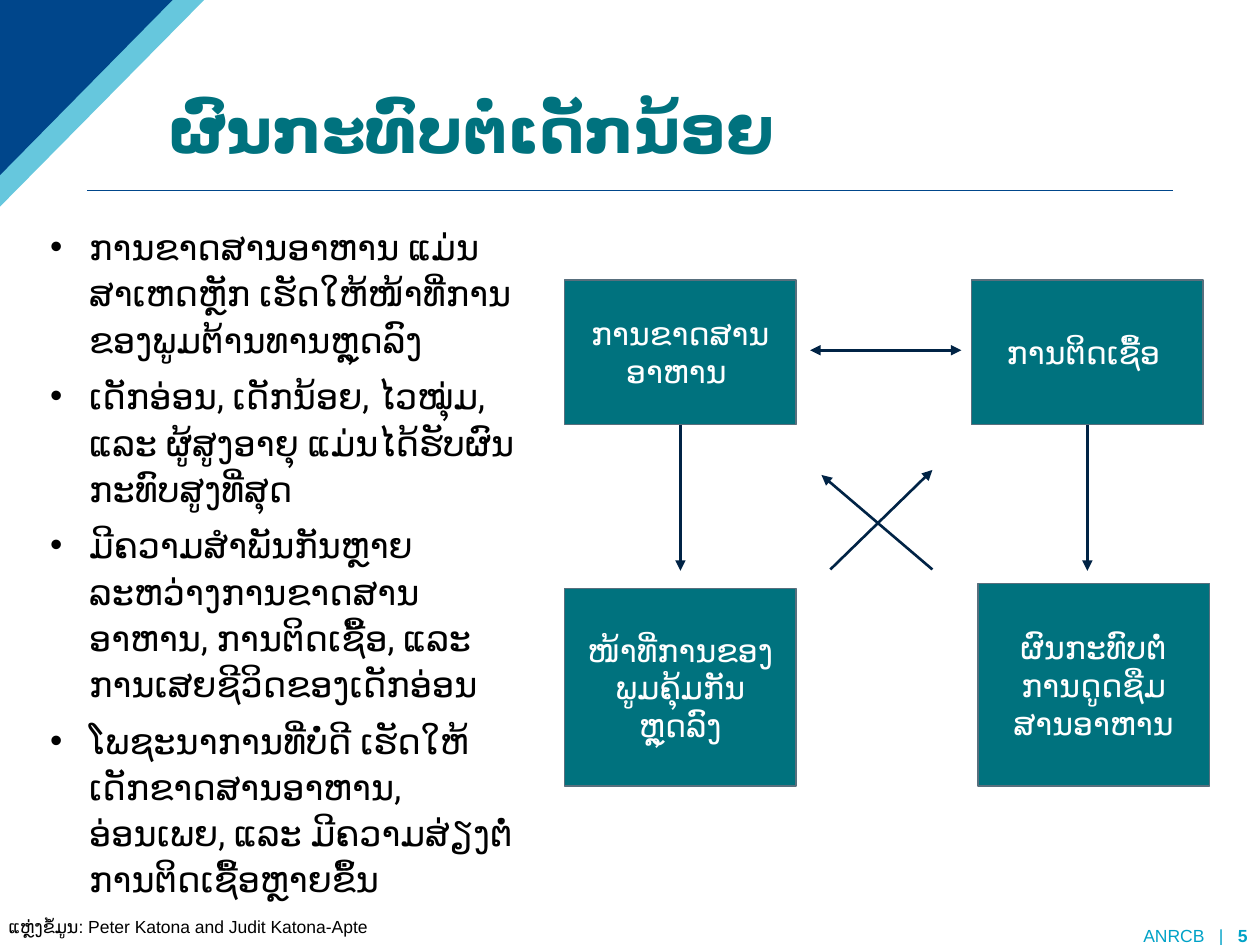
"""Build a slide on how malnutrition and infection affect children."""
from lxml import etree
from pptx import Presentation
from pptx.dml.color import RGBColor
from pptx.enum import shapes, text
from pptx.oxml import ns
from pptx.util import Inches, Pt

TEAL = RGBColor(0x00, 0x72, 0x7E)
NAVY = RGBColor(0x00, 0x23, 0x45)
BLUE = RGBColor(0x00, 0x46, 0x8B)
CYAN = RGBColor(0x00, 0xA2, 0xC7)
SLATE = RGBColor(0x58, 0x6F, 0x7D)
BLACK = RGBColor(0, 0, 0)
WHITE = RGBColor(255, 255, 255)

TITLE = "ຜົນກະທົບຕໍ່ເດັກນ້ອຍ"
BULLETS = [
    "ການຂາດສານອາຫານ ແມ່ນສາເຫດຫຼັກ ເຮັດໃຫ້ໜ້າທີ່ການຂອງພູມຕ້ານທານຫຼຸດລົງ",
    "ເດັກອ່ອນ, ເດັກນ້ອຍ, ໄວໝຸ່ມ, ແລະ ຜູ້ສູງອາຍຸ ແມ່ນໄດ້ຮັບຜົນກະທົບສູງທີ່ສຸດ",
    "ມີຄວາມສຳພັນກັນຫຼາຍ ລະຫວ່າງການຂາດສານອາຫານ, ການຕິດເຊື້ອ, ແລະ ການເສຍຊີວິດຂອງເດັກອ່ອນ",
    "ໂພຊະນາການທີ່ບໍ່ດີ ເຮັດໃຫ້ເດັກຂາດສານອາຫານ, ອ່ອນເພຍ, ແລະ ມີຄວາມສ່ຽງຕໍ່ການຕິດເຊື້ອຫຼາຍຂຶ້ນ",
]
BOX_WIDTH = 1.84
BOXES = [
    (4.48, 2.22, 1.15, ["ການຂາດສານອາຫານ "]),
    (7.71, 2.22, 1.15, ["ການຕິດເຊື້ອ "]),
    (4.48, 4.67, 1.57, ["ໜ້າທີ່ການຂອງ ພູມຄຸ້ມກັນຫຼຸດລົງ"]),
    (7.76, 4.63, 1.61, ["ຜົນກະທົບຕໍ່", "ການດູດຊືມ", "ສານອາຫານ"]),
]
ARROWS = [
    ((6.43, 2.78), (7.63, 2.78), ("headEnd", "tailEnd")),
    ((5.4, 3.37), (5.4, 4.53), ("tailEnd",)),
    ((8.63, 3.37), (8.63, 4.53), ("tailEnd",)),
    ((7.4, 4.52), (6.52, 3.77), ("tailEnd",)),
    ((6.59, 4.52), (7.4, 3.73), ("tailEnd",)),
]
CORNERS = [(1.62, 1.64, CYAN, 60), (1.37, 1.39, BLUE, 100)]


def add_run(paragraph, words, size, color, font="Roboto", bold=False):
    run = paragraph.add_run()
    run.text = words
    run.font.name = font
    run.font.size = Pt(size)
    run.font.bold = bold
    run.font.color.rgb = color


def add_text(slide, left, top, width, height, anchor=text.MSO_ANCHOR.TOP):
    frame = slide.shapes.add_textbox(*map(Inches, (left, top, width, height))).text_frame
    frame.word_wrap = True
    frame.vertical_anchor = anchor
    return frame


def next_paragraph(frame, index):
    return frame.paragraphs[0] if index == 0 else frame.add_paragraph()


def add_corner(slide, width, height, color, opacity):
    builder = slide.shapes.build_freeform(0, 0)
    builder.add_line_segments([(Inches(width), 0), (0, Inches(height))], close=True)
    corner = builder.convert_to_shape()
    corner.shadow.inherit = False
    corner.fill.solid()
    corner.fill.fore_color.rgb = color
    corner.line.fill.background()
    if opacity < 100:
        fill_color = corner._element.spPr.find(ns.qn("a:solidFill"))[0]
        etree.SubElement(fill_color, ns.qn("a:alpha"), val=str(opacity * 1000))


def add_line(slide, start, end, color, weight, arrowheads=()):
    line = slide.shapes.add_connector(
        shapes.MSO_CONNECTOR.STRAIGHT, *map(Inches, start + end))
    line.line.color.rgb = color
    line.line.width = Pt(weight)
    properties = line._element.spPr
    for arrowhead in arrowheads:
        etree.SubElement(properties.find(ns.qn("a:ln")), ns.qn(f"a:{arrowhead}"), type="triangle")
    etree.SubElement(properties, ns.qn("a:effectLst"))


def add_box(slide, left, top, height, lines):
    box = slide.shapes.add_shape(
        shapes.MSO_SHAPE.RECTANGLE, *map(Inches, (left, top, BOX_WIDTH, height)))
    box.shadow.inherit = False
    box.fill.solid()
    box.fill.fore_color.rgb = TEAL
    box.line.color.rgb = SLATE
    box.line.width = Pt(1)
    box.text_frame.word_wrap = True
    box.text_frame.vertical_anchor = text.MSO_ANCHOR.MIDDLE
    for index, words in enumerate(lines):
        paragraph = next_paragraph(box.text_frame, index)
        paragraph.alignment = text.PP_ALIGN.CENTER
        add_run(paragraph, words, 18, WHITE)


def add_bullets(slide):
    frame = add_text(slide, 0.3, 1.71, 3.89, 5.17)
    for index, words in enumerate(BULLETS):
        paragraph = next_paragraph(frame, index)
        paragraph.line_spacing = 1.1
        paragraph.space_before = Pt(6 if index else 0)
        properties = paragraph._p.get_or_add_pPr()
        properties.set("marL", str(Inches(0.31)))
        properties.set("indent", str(-Inches(0.31)))
        bullet_color = etree.SubElement(properties, ns.qn("a:buClr"))
        etree.SubElement(bullet_color, ns.qn("a:srgbClr"), val=str(BLACK))
        etree.SubElement(properties, ns.qn("a:buFont"), typeface="Arial")
        etree.SubElement(properties, ns.qn("a:buChar"), char="•")
        add_run(paragraph, words, 20, BLACK)


def main():
    presentation = Presentation()
    presentation.slide_width = Inches(10)
    presentation.slide_height = Inches(7.5)
    slide = presentation.slides.add_slide(presentation.slide_layouts[6])

    add_line(slide, (0.69, 1.51), (9.31, 1.51), BLUE, 0.75)
    for corner in CORNERS:
        add_corner(slide, *corner)

    title = add_text(slide, 1.24, 0.38, 8.36, 1, text.MSO_ANCHOR.BOTTOM).paragraphs[0]
    title.line_spacing = 0.9
    add_run(title, TITLE, 36, TEAL, bold=True)

    footer = add_text(slide, 8.35, 7.32, 1.65, 0.21, text.MSO_ANCHOR.MIDDLE).paragraphs[0]
    footer.alignment = text.PP_ALIGN.RIGHT
    add_run(footer, "ANRCB   |   ", 10, CYAN, "Arial")
    add_run(footer, "5", 10, CYAN, "Arial", bold=True)

    for start, end, arrowheads in ARROWS:
        add_line(slide, start, end, NAVY, 1.5, arrowheads)
    for box in BOXES:
        add_box(slide, *box)
    add_bullets(slide)

    source = add_text(slide, -0.03, 7.22, 7.21, 0.44).paragraphs[0]
    add_run(source, "ແຫຼ່ງຂໍ້ມູນ", 10, BLACK)
    add_run(source, ": Peter Katona and Judit Katona-Apte", 10, BLACK, "Arial")
    presentation.save("out.pptx")


if __name__ == "__main__":
    main()
